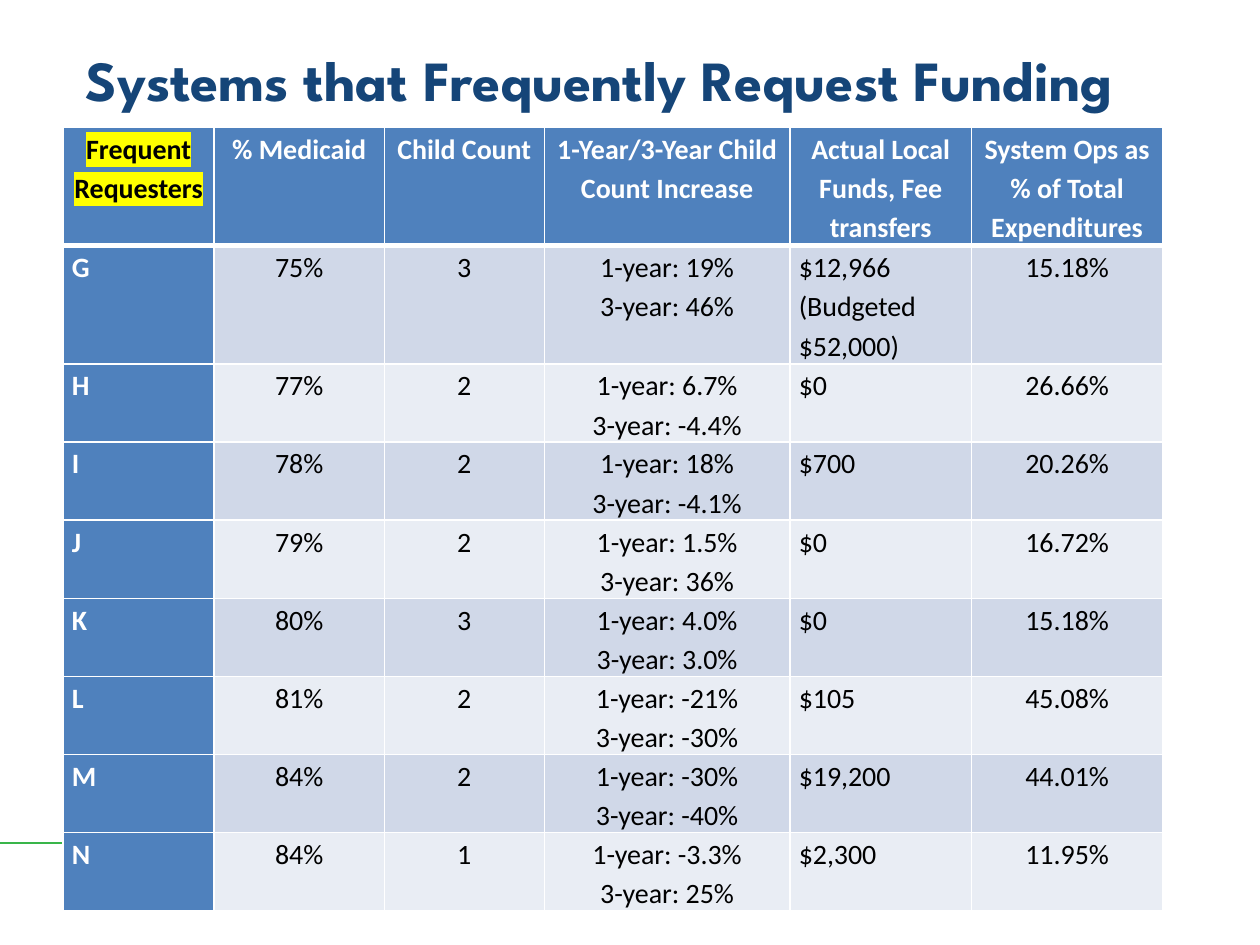
from lxml.etree import SubElement
from pptx import Presentation
from pptx.dml.color import RGBColor
from pptx.enum.shapes import MSO_CONNECTOR
from pptx.enum.text import MSO_ANCHOR, PP_ALIGN
from pptx.oxml import parse_xml
from pptx.oxml.ns import nsdecls, qn
from pptx.util import Inches, Pt

WHITE, BLACK, NAVY, GREEN = "FFFFFF", "000000", "154578", "39B54A"
HEADER_FILL, BANDS, HIGHLIGHT = "4F81BD", ("D0D8E8", "E9EDF4"), "FFFF00"

COL_WIDTHS = [1.2, 1.35, 1.27, 1.95, 1.44, 1.52]
ROW_HEIGHTS = [0.94] * 2 + [0.62] * 7
HEADERS = ["Frequent\nRequesters", "% Medicaid", "Child Count",
           "1-Year/3-Year Child Count Increase",
           "Actual Local Funds, Fee transfers",
           "System Ops as % of Total Expenditures"]
# system, Medicaid, child count, 1-year increase, 3-year increase, local funds, system ops
SYSTEMS = [
    ("G", "75%", "3", "19%", "46%", "$12,966\n(Budgeted $52,000)", "15.18%"),
    ("H", "77%", "2", "6.7%", "-4.4%", "$0", "26.66%"),
    ("I", "78%", "2", "18%", "-4.1%", "$700", "20.26%"),
    ("J", "79%", "2", "1.5%", "36%", "$0", "16.72%"),
    ("K", "80%", "3", "4.0%", "3.0%", "$0", "15.18%"),
    ("L", "81%", "2", "-21%", "-30%", "$105", "45.08%"),
    ("M", "84%", "2", "-30%", "-40%", "$19,200", "44.01%"),
    ("N", "84%", "1", "-3.3%", "25%", "$2,300", "11.95%"),
]


def rgb(value):
    return RGBColor.from_string(value)


def set_attrs(obj, values):
    for name, value in values.items():
        setattr(obj, name, value)


class SlideBuilder:
    title_font = {"name": "League Spartan", "size": Pt(32.4), "bold": True}
    cell_font = {"name": "Calibri", "size": Pt(16)}
    cell_margins = {"margin_left": Inches(0.07), "margin_right": Inches(0.07),
                    "margin_top": 0, "margin_bottom": 0}

    def __init__(self, slide):
        self.s = slide

    def line(self, x1, y1, x2, y2, color, width):
        sp = self.s.shapes.add_connector(
            MSO_CONNECTOR.STRAIGHT, Inches(x1), Inches(y1), Inches(x2), Inches(y2))
        sp.line.color.rgb = rgb(color)
        sp.line.width = Pt(width)
        SubElement(sp._element.spPr, qn("a:effectLst"))

    def title(self, text, x, y, w, h):
        sp = self.s.shapes.add_textbox(Inches(x), Inches(y), Inches(w), Inches(h))
        tf = sp.text_frame
        set_attrs(tf, {"word_wrap": True, "vertical_anchor": MSO_ANCHOR.MIDDLE})
        r = tf.paragraphs[0].add_run()
        r.text = text
        set_attrs(r.font, self.title_font)
        r.font.color.rgb = rgb(NAVY)

    def table(self, x, y, col_widths, row_heights):
        frame = self.s.shapes.add_table(
            len(row_heights), len(col_widths), Inches(x), Inches(y),
            Inches(sum(col_widths)), Inches(sum(row_heights)))
        table = frame.table
        for col, width in zip(table.columns, col_widths):
            col.width = Inches(width)
        for row, height in zip(table.rows, row_heights):
            row.height = Inches(height)
        return table

    def cell(self, cell, text, fill, color, bold, align, top, bottom, highlight=None):
        """Fill one cell; top and bottom are border widths in points."""
        set_attrs(cell, self.cell_margins)
        cell.fill.solid()
        cell.fill.fore_color.rgb = rgb(fill)
        self.borders(cell, {"lnL": 1, "lnR": 1, "lnT": top, "lnB": bottom})
        cell.text_frame.text = text
        for p in cell.text_frame.paragraphs:
            set_attrs(p, {"alignment": align, "line_spacing": 1.15})
            for r in p.runs:
                set_attrs(r.font, {**self.cell_font, "bold": bold})
                r.font.color.rgb = rgb(color)
                if highlight:
                    self.highlight(r, highlight)

    def borders(self, cell, widths):
        tc_pr = cell._tc.get_or_add_tcPr()
        for i, (side, width) in enumerate(widths.items()):
            tc_pr.insert(i, parse_xml(
                f'<a:{side} {nsdecls("a")} w="{Pt(width)}"><a:solidFill>'
                f'<a:srgbClr val="{WHITE}"/></a:solidFill></a:{side}>'))

    def highlight(self, r, color):
        fill = r._r.get_or_add_rPr().find(qn("a:solidFill"))
        fill.addnext(parse_xml(
            f'<a:highlight {nsdecls("a")}><a:srgbClr val="{color}"/></a:highlight>'))


def main():
    prs = Presentation()
    set_attrs(prs, {"slide_width": Inches(10), "slide_height": Inches(7.5)})
    builder = SlideBuilder(prs.slides.add_slide(prs.slide_layouts[6]))

    builder.line(0, 6.69, 8.17, 6.69, GREEN, 1.5)
    builder.title("Systems that Frequently Request Funding", 0.58, 0.25, 9, 0.76)
    table = builder.table(0.5, 1.01, COL_WIDTHS, ROW_HEIGHTS)

    for c, text in enumerate(HEADERS):
        first = c == 0
        builder.cell(table.cell(0, c), text, HEADER_FILL, BLACK if first else WHITE,
                     True, PP_ALIGN.CENTER, 1, 3, HIGHLIGHT if first else None)

    for i, (system, medicaid, count, one, three, funds, ops) in enumerate(SYSTEMS):
        increase = f"1-year: {one}\n3-year: {three}"
        for c, text in enumerate([system, medicaid, count, increase, funds, ops]):
            first = c == 0
            builder.cell(table.cell(i + 1, c), text,
                         HEADER_FILL if first else BANDS[i % 2],
                         WHITE if first else BLACK, first,
                         PP_ALIGN.LEFT if c in (0, 4) else PP_ALIGN.CENTER,
                         3 if i == 0 else 1, 1)

    prs.save("out.pptx")


if __name__ == "__main__":
    main()
